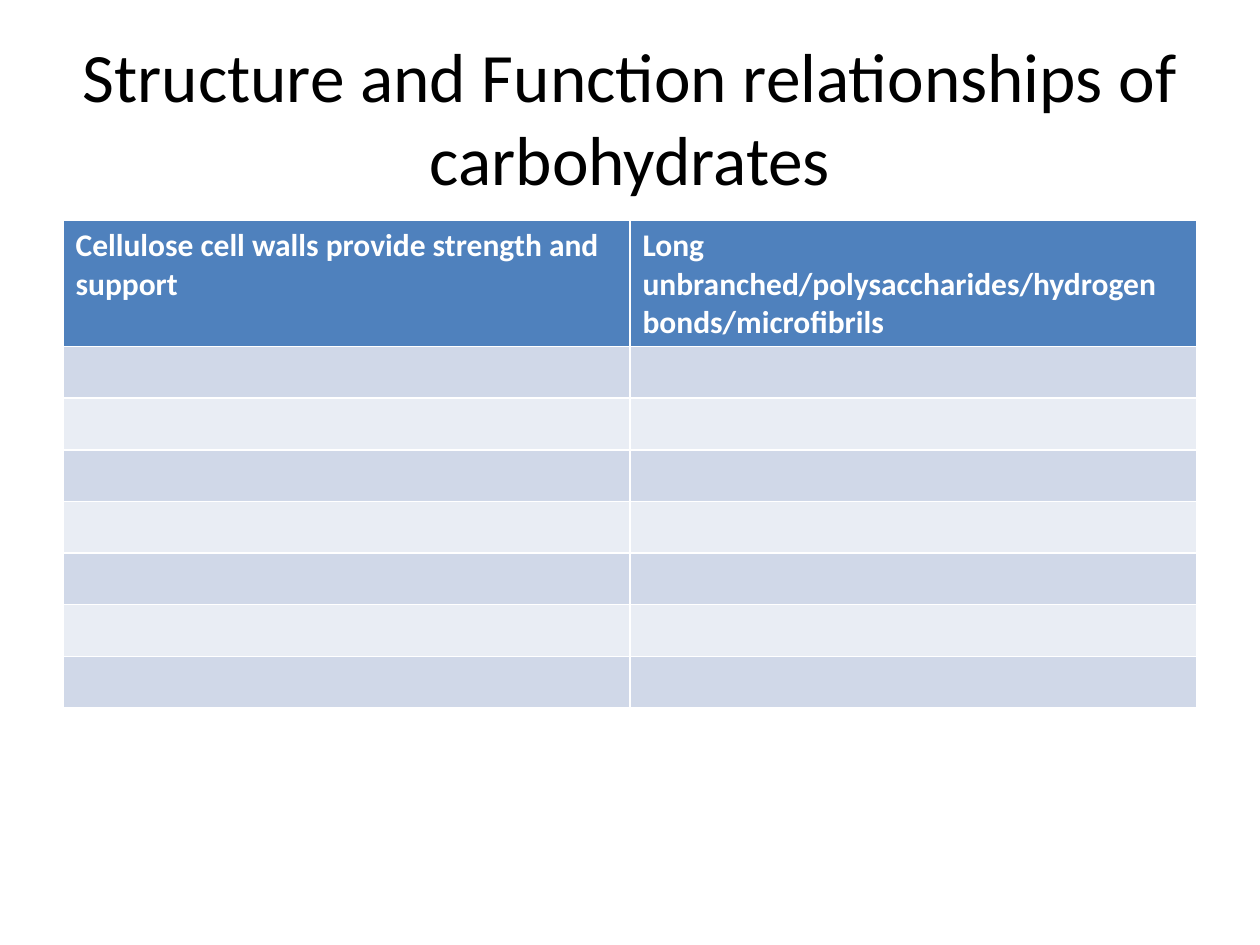
from pptx import Presentation
from pptx.dml.color import RGBColor
from pptx.enum.text import MSO_ANCHOR, PP_ALIGN
from pptx.util import Inches, Pt

COLORS = {"title": "000000", "header": "4F81BD", "header_text": "FFFFFF",
          "band_dark": "D0D8E8", "band_light": "E9EDF4"}
HEADERS = ["Cellulose cell walls provide strength and support",
           "Long unbranched/polysaccharides/hydrogen bonds/microfibrils"]
ROWS = 8


def style_font(p, size, color, bold=False):
    p.font.name = "Calibri"
    p.font.size = Pt(size)
    p.font.bold = bold
    p.font.color.rgb = RGBColor.from_string(COLORS[color])


prs = Presentation()
prs.slide_width, prs.slide_height = Inches(10), Inches(7.5)
s = prs.slides.add_slide(prs.slide_layouts[6])
margin = int(prs.slide_width * 0.05)
content_w = prs.slide_width - 2 * margin

# Title
tf = s.shapes.add_textbox(margin, int(prs.slide_height * 0.04),
                          content_w, Inches(1.25)).text_frame
tf.word_wrap = True
tf.vertical_anchor = MSO_ANCHOR.MIDDLE
p = tf.paragraphs[0]
p.text = "Structure and Function relationships of carbohydrates"
p.alignment = PP_ALIGN.CENTER
style_font(p, 39.6, "title")

# Table: a tall header row above equal banded rows
header_h, row_h = Inches(1), Inches(0.41)
table = s.shapes.add_table(ROWS, len(HEADERS), margin, Inches(1.75), content_w,
                           header_h + row_h * (ROWS - 1)).table
for i, row in enumerate(table.rows):
    row.height = row_h if i else header_h
    fill = ("band_dark" if i % 2 else "band_light") if i else "header"
    for cell in row.cells:
        cell.fill.solid()
        cell.fill.fore_color.rgb = RGBColor.from_string(COLORS[fill])

# Header text
for cell, text in zip(table.rows[0].cells, HEADERS):
    p = cell.text_frame.paragraphs[0]
    p.text = text
    style_font(p, 18, "header_text", bold=True)

prs.save("out.pptx")
